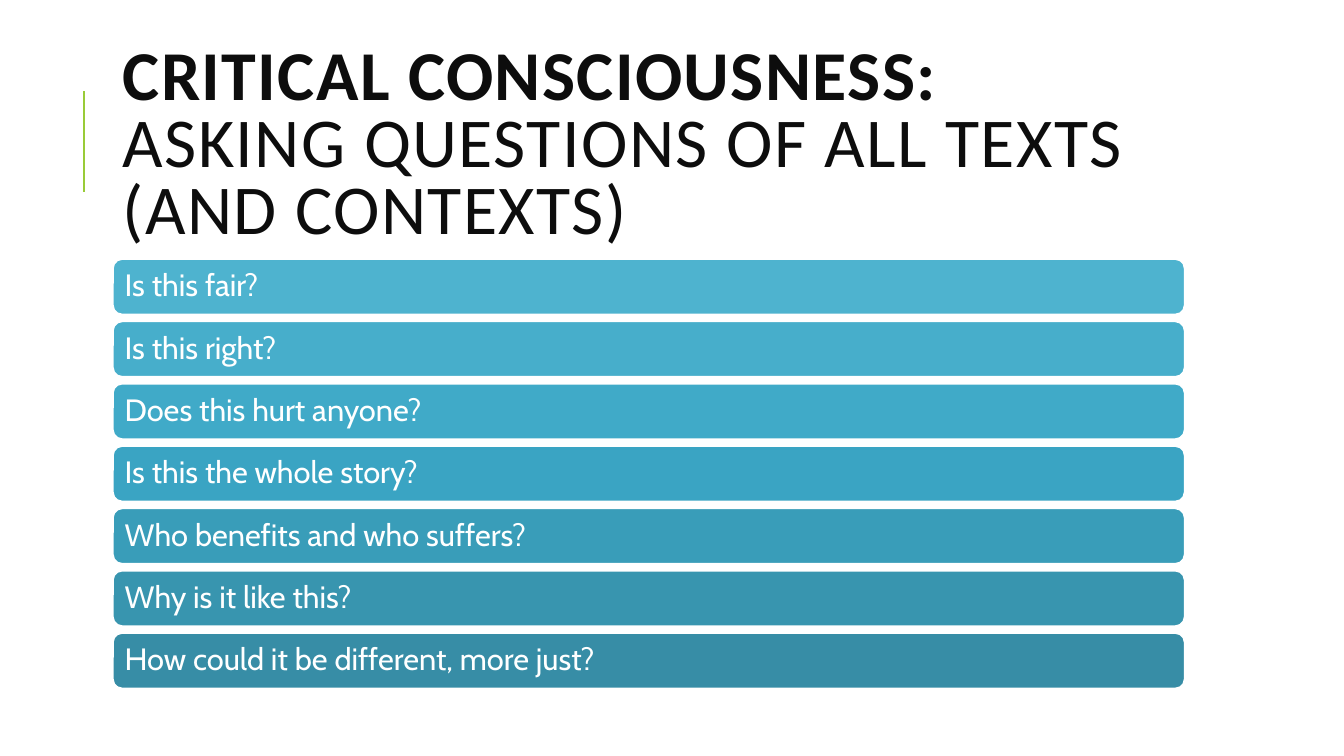
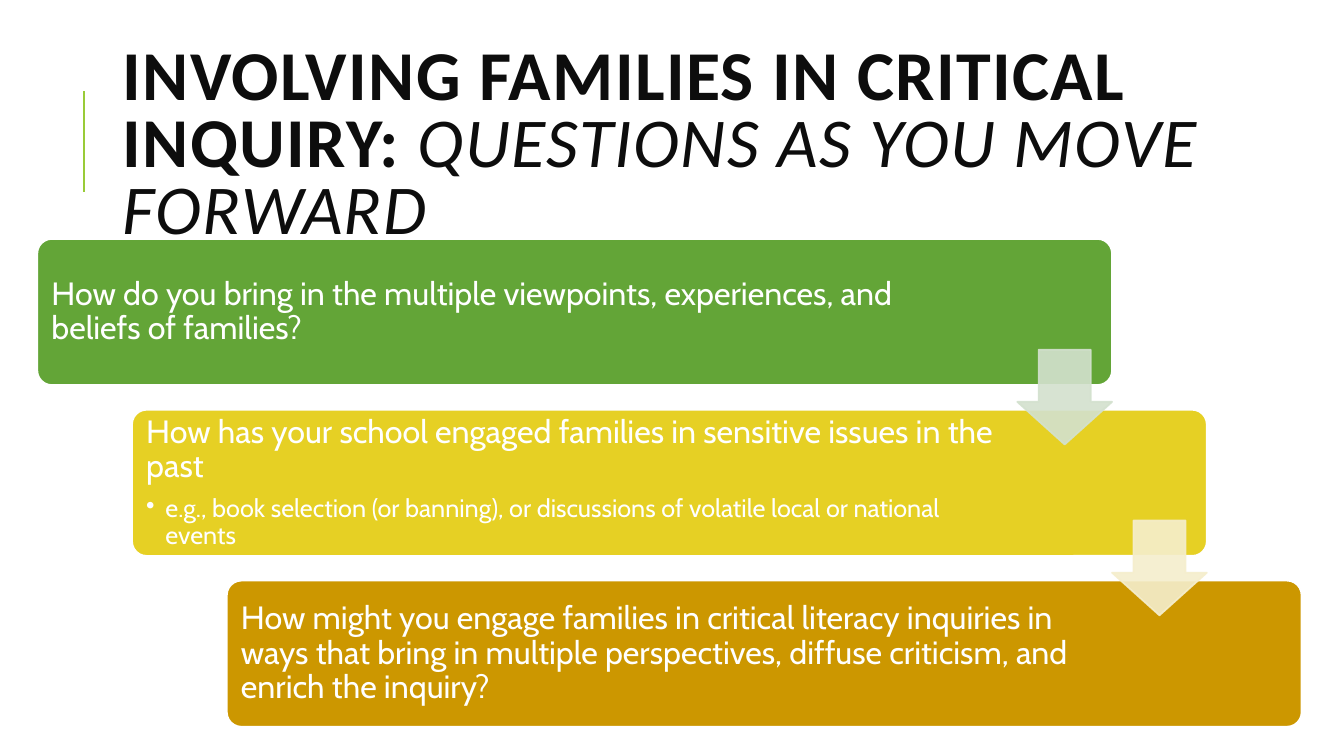
from lxml import etree
from pptx import Presentation
from pptx.dml.color import RGBColor
from pptx.enum.shapes import MSO_CONNECTOR, MSO_SHAPE
from pptx.enum.text import MSO_ANCHOR, PP_ALIGN
from pptx.oxml.ns import qn
from pptx.util import Inches, Pt

MIDDLE = MSO_ANCHOR.MIDDLE
LEFT = PP_ALIGN.LEFT
ROUNDED = MSO_SHAPE.ROUNDED_RECTANGLE
DOWN_ARROW = MSO_SHAPE.DOWN_ARROW
STRAIGHT = MSO_CONNECTOR.STRAIGHT

WHITE = RGBColor(0xFF, 0xFF, 0xFF)
INK = RGBColor(0x0D, 0x0D, 0x0D)
LIME = RGBColor(0x99, 0xCB, 0x38)
GREEN = RGBColor(0x63, 0xA5, 0x37)
YELLOW = RGBColor(0xE6, 0xD0, 0x24)
OCHRE = RGBColor(0xCC, 0x97, 0x00)
PALE_GREEN = RGBColor(0xD3, 0xE1, 0xCE)
PALE_YELLOW = RGBColor(0xF5, 0xEE, 0xCD)
BLUES = [
    RGBColor(0x4E, 0xB3, 0xCF),
    RGBColor(0x47, 0xAE, 0xCB),
    RGBColor(0x40, 0xAA, 0xC8),
    RGBColor(0x3A, 0xA4, 0xC3),
    RGBColor(0x39, 0x9D, 0xB9),
    RGBColor(0x38, 0x95, 0xAF),
    RGBColor(0x37, 0x8D, 0xA6),
]

TITLE_FONT = {"name": "Calibri", "size": Pt(50)}
STRONG = {"bold": True}
PLAIN = {"bold": False}
SLANTED = {"bold": False, "italic": True}
LINE_BREAK = "\v"

TITLES = [
    (10.63, [
        ("CRITICAL CONSCIOUSNESS:", STRONG),
        (LINE_BREAK, PLAIN),
        ("ASKING QUESTIONS OF ALL TEXTS (AND CONTEXTS)", PLAIN),
    ]),
    (11.56, [
        ("INVOLVING FAMILIES IN CRITICAL INQUIRY: ", STRONG),
        ("QUESTIONS AS YOU MOVE FORWARD", SLANTED),
    ]),
]

QUESTIONS = [
    "Is this fair?",
    "Is this right?",
    "Does this hurt anyone?",
    "Is this the whole story?",
    "Who benefits and who suffers?",
    "Why is it like this?",
    "How could it be different, more just?",
]

STEPS = [
    (GREEN, PALE_GREEN, [
        "How do you bring in the multiple viewpoints, experiences, and beliefs of families?",
    ]),
    (YELLOW, PALE_YELLOW, [
        "How has your school engaged families in sensitive issues in the past",
        "e.g., book selection (or banning), or discussions of volatile local or national events",
    ]),
    (OCHRE, None, [
        "How might you engage families in critical literacy inquiries in ways that bring in "
        "multiple perspectives, diffuse criticism, and enrich the inquiry?",
    ]),
]


def add_block(slide, preset, left, top, width, height, fill, outline):
    shape = slide.shapes.add_shape(
        preset, Inches(left), Inches(top), Inches(width), Inches(height)
    )
    shape.shadow.inherit = False
    shape.fill.solid()
    shape.fill.fore_color.rgb = fill
    shape.line.color.rgb = outline
    shape.line.width = Pt(1.25)
    return shape


def fill_card(shape, texts, size, inset, right_inset):
    frame = shape.text_frame
    frame_format = {
        "word_wrap": True,
        "vertical_anchor": MIDDLE,
        "margin_left": Inches(inset),
        "margin_right": Inches(right_inset),
        "margin_top": 0,
        "margin_bottom": 0,
    }
    for name, value in frame_format.items():
        setattr(frame, name, value)
    for level, text in enumerate(texts):
        paragraph = frame.add_paragraph() if level else frame.paragraphs[0]
        paragraph.text = text
        paragraph_format = {
            "level": level,
            "alignment": LEFT,
            "line_spacing": 0.9,
            "space_after": Pt(3 if level else 8),
        }
        for name, value in paragraph_format.items():
            setattr(paragraph, name, value)
        paragraph.font.name = "Cabin"
        paragraph.font.size = Pt(18 if level else size)
        paragraph.font.color.rgb = WHITE
        if level:
            properties = paragraph._p.get_or_add_pPr()
            properties.set("marL", str(Inches(0.19)))
            properties.set("indent", str(-Inches(0.19)))
            bullet = etree.Element(qn("a:buChar"), char="•")
            properties.find(qn("a:spcAft")).addnext(bullet)


presentation = Presentation()
presentation.slide_width = Inches(13.33)
presentation.slide_height = Inches(7.5)
blank_layout = presentation.slide_layouts[6]

for title_width, title_runs in TITLES:
    slide = presentation.slides.add_slide(blank_layout)
    accent = slide.shapes.add_connector(
        STRAIGHT, Inches(0.83), Inches(1.9), Inches(0.83), Inches(0.9)
    )
    accent.line.color.rgb = LIME
    accent.line.width = Pt(1.5)
    etree.SubElement(accent._element.spPr, qn("a:effectLst"))

    title = slide.shapes.add_textbox(
        Inches(1.12), Inches(0.64), Inches(title_width), Inches(1.64)
    )
    title.text_frame.word_wrap = True
    title.text_frame.vertical_anchor = MIDDLE
    paragraph = title.text_frame.paragraphs[0]
    paragraph.line_spacing = 0.8
    for text, style in title_runs:
        if text == LINE_BREAK:
            paragraph.add_line_break()
            continue
        run = paragraph.add_run()
        run.text = text
        for name, value in {**TITLE_FONT, **style}.items():
            setattr(run.font, name, value)
        run.font.color.rgb = INK
        run._r.get_or_add_rPr().set("spc", "100")

question_slide, step_slide = presentation.slides

QUESTION_TOP = 2.57
QUESTION_PITCH = (6.28 - QUESTION_TOP) / (len(QUESTIONS) - 1)
for row, (question, blue) in enumerate(zip(QUESTIONS, BLUES)):
    top = QUESTION_TOP + row * QUESTION_PITCH
    card = add_block(question_slide, ROUNDED, 1.12, top, 10.63, 0.55, blue, WHITE)
    fill_card(card, [question], 22, 0.09, 0.09)

STEP_LEFT, STEP_TOP = 0.37, 2.37
STEP_WIDTH, STEP_HEIGHT = 10.66, 1.45
STEP_SHIFT = 0.94
STEP_PITCH = (5.76 - STEP_TOP) / (len(STEPS) - 1)
ARROW_SIZE = 0.94
ARROW_DROP = 1.1

for row, (color, _, texts) in enumerate(STEPS):
    left = STEP_LEFT + row * STEP_SHIFT
    top = STEP_TOP + row * STEP_PITCH
    card = add_block(
        step_slide, ROUNDED, left, top, STEP_WIDTH, STEP_HEIGHT, color, WHITE
    )
    card.adjustments[0] = 0.1
    fill_card(card, texts, 23, 0.1, 1.98)

for row, (_, pale, _) in enumerate(STEPS[:-1]):
    left = STEP_LEFT + row * STEP_SHIFT + STEP_WIDTH - ARROW_SIZE
    top = STEP_TOP + row * STEP_PITCH + ARROW_DROP
    arrow = add_block(
        step_slide, DOWN_ARROW, left, top, ARROW_SIZE, ARROW_SIZE, pale, pale
    )
    arrow.adjustments[0] = 0.55
    arrow.adjustments[1] = 0.45
    for color_element in arrow._element.spPr.iter(qn("a:srgbClr")):
        etree.SubElement(color_element, qn("a:alpha"), val="90000")

presentation.save("out.pptx")
